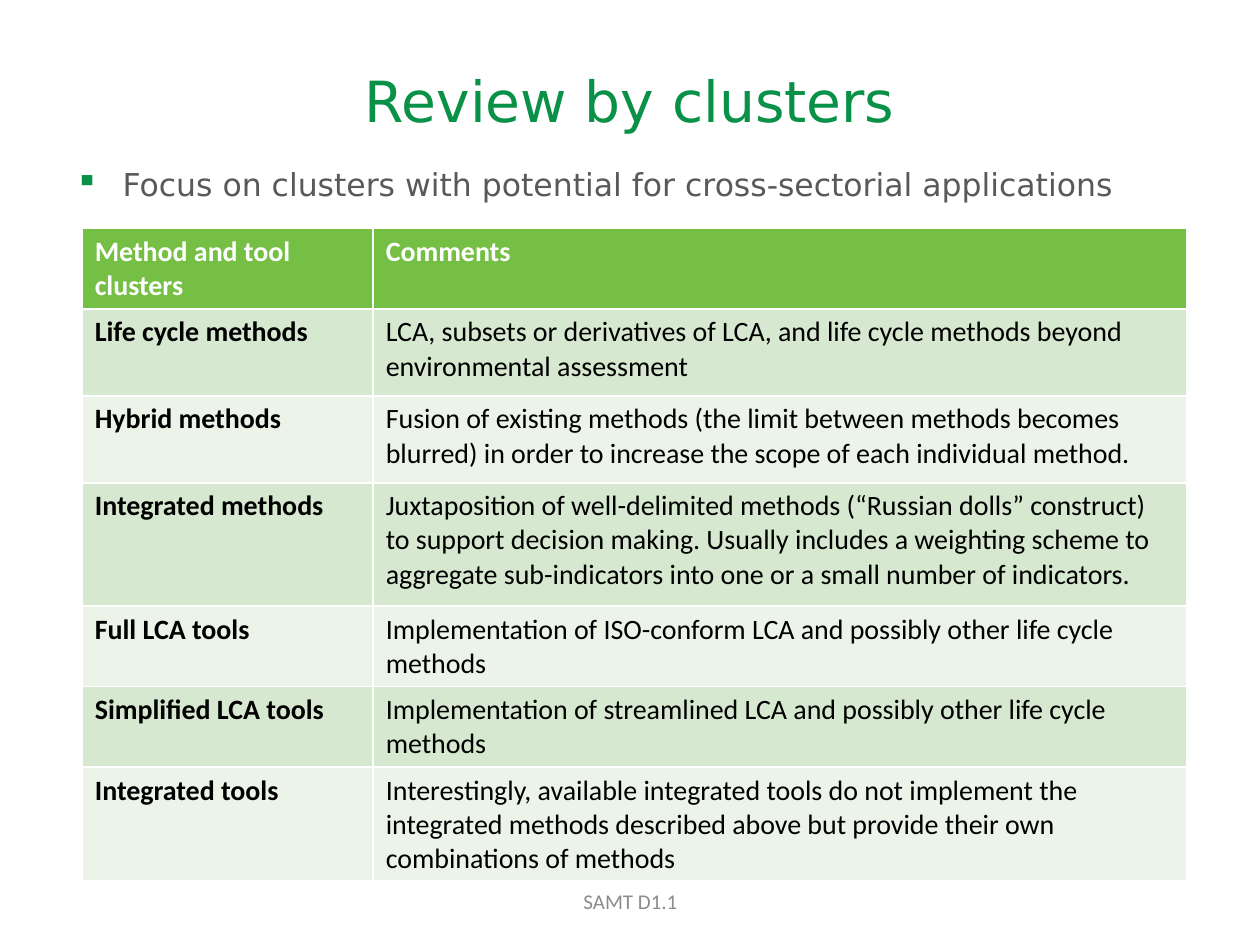
from typing import NamedTuple

from lxml import etree
from pptx import Presentation
from pptx.dml.color import RGBColor
from pptx.enum.text import MSO_ANCHOR, PP_ALIGN
from pptx.oxml.ns import qn
from pptx.util import Pt

LEFT, CENTER = PP_ALIGN.LEFT, PP_ALIGN.CENTER
TOP, MIDDLE = MSO_ANCHOR.TOP, MSO_ANCHOR.MIDDLE

GREEN = RGBColor(0x08, 0x91, 0x47)
HEADER_GREEN = RGBColor(0x75, 0xBF, 0x44)
BAND_DARK = RGBColor(0xD6, 0xE8, 0xCF)
BAND_LIGHT = RGBColor(0xEC, 0xF4, 0xE9)
BODY_GREY = RGBColor(0x59, 0x59, 0x59)
FOOTER_GREY = RGBColor(0x8C, 0x8C, 0x8C)
BLACK = RGBColor(0, 0, 0)
WHITE = RGBColor(0xFF, 0xFF, 0xFF)

HEADING_FONT, TABLE_FONT = "DejaVu Sans", "Calibri"
COLUMN_WIDTHS = (166.3, 465.1)
BORDER_WIDTH = 1
BULLET_INDENT = 27


class Box(NamedTuple):
    left: float
    top: float
    width: float
    height: float


class Cluster(NamedTuple):
    name: str
    comment: str
    height: float


HEADER = Cluster("Method and tool clusters", "Comments", 46)
CLUSTERS = (
    Cluster("Life cycle methods",
            "LCA, subsets or derivatives of LCA, and life cycle methods beyond "
            "environmental assessment", 49.7),
    Cluster("Hybrid methods",
            "Fusion of existing methods (the limit between methods becomes blurred) "
            "in order to increase the scope of each individual method.", 49.7),
    Cluster("Integrated methods",
            "Juxtaposition of well-delimited methods (“Russian dolls” construct) to "
            "support decision making. Usually includes a weighting scheme to aggregate "
            "sub-indicators into one or a small number of indicators.", 70.5),
    Cluster("Full LCA tools",
            "Implementation of ISO-conform LCA and possibly other life cycle methods", 46),
    Cluster("Simplified LCA tools",
            "Implementation of streamlined LCA and possibly other life cycle methods", 46),
    Cluster("Integrated tools",
            "Interestingly, available integrated tools do not implement the integrated "
            "methods described above but provide their own combinations of methods", 65),
)


def add_bullet(paragraph, symbol: str, color: RGBColor) -> None:
    properties = paragraph._p.get_or_add_pPr()
    properties.set("marL", str(Pt(BULLET_INDENT)))
    properties.set("indent", str(-Pt(BULLET_INDENT)))
    bullet_color = etree.SubElement(properties, qn("a:buClr"))
    etree.SubElement(bullet_color, qn("a:srgbClr"), val=str(color))
    etree.SubElement(properties, qn("a:buChar"), char=symbol)


def write_text(frame, text: str, *, size: float, color: RGBColor, font: str,
               bold: bool = False, align: PP_ALIGN = LEFT, bullet: str = "") -> None:
    frame.word_wrap = True
    paragraph = frame.paragraphs[0]
    if bullet:
        add_bullet(paragraph, bullet, GREEN)
    paragraph.alignment = align
    run = paragraph.add_run()
    run.text = text
    run.font.size = Pt(size)
    run.font.name = font
    run.font.bold = bold
    run.font.color.rgb = color


def add_text(slide, box: Box, text: str, *, anchor: MSO_ANCHOR = TOP,
             top_inset: float = 3.6, **style) -> None:
    frame = slide.shapes.add_textbox(*map(Pt, box)).text_frame
    frame.vertical_anchor = anchor
    frame.margin_top = Pt(top_inset)
    write_text(frame, text, **style)


def outline_cell(cell) -> None:
    properties = cell._tc.get_or_add_tcPr()
    for side in ("lnL", "lnR", "lnT", "lnB"):
        line = etree.SubElement(properties, qn(f"a:{side}"), w=str(Pt(BORDER_WIDTH)))
        fill = etree.SubElement(line, qn("a:solidFill"))
        etree.SubElement(fill, qn("a:srgbClr"), val=str(WHITE))


def fill_row(table, index: int, cluster: Cluster, background: RGBColor,
             color: RGBColor) -> None:
    table.rows[index].height = Pt(cluster.height)
    for column, text in enumerate((cluster.name, cluster.comment)):
        cell = table.cell(index, column)
        outline_cell(cell)
        cell.fill.solid()
        cell.fill.fore_color.rgb = background
        write_text(cell.text_frame, text, size=16, color=color, font=TABLE_FONT,
                   bold=index == 0 or column == 0)


def add_cluster_table(slide, left: float, top: float) -> None:
    height = HEADER.height + sum(cluster.height for cluster in CLUSTERS)
    table = slide.shapes.add_table(
        len(CLUSTERS) + 1, len(COLUMN_WIDTHS),
        Pt(left), Pt(top), Pt(sum(COLUMN_WIDTHS)), Pt(height)).table
    for column, width in zip(table.columns, COLUMN_WIDTHS):
        column.width = Pt(width)
    fill_row(table, 0, HEADER, HEADER_GREEN, WHITE)
    for index, cluster in enumerate(CLUSTERS, start=1):
        fill_row(table, index, cluster, BAND_DARK if index % 2 else BAND_LIGHT, BLACK)


def main() -> None:
    deck = Presentation()
    deck.slide_width, deck.slide_height = Pt(720), Pt(540)
    slide = deck.slides.add_slide(deck.slide_layouts[6])
    add_text(slide, Box(36, 33.8, 648, 82), "Review by clusters",
             size=32.4, color=GREEN, font=HEADING_FONT, align=CENTER)
    add_text(slide, Box(36, 89.3, 670.3, 384.5),
             "Focus on clusters with potential for cross-sectorial applications",
             size=18, color=BODY_GREY, font=HEADING_FONT, bullet="▪", top_inset=5)
    add_text(slide, Box(246.2, 500.4, 228.2, 28.8), "SAMT D1.1", anchor=MIDDLE,
             size=12, color=FOOTER_GREY, font=TABLE_FONT, align=CENTER)
    add_cluster_table(slide, 47, 130.5)
    deck.save("out.pptx")


if __name__ == "__main__":
    main()
